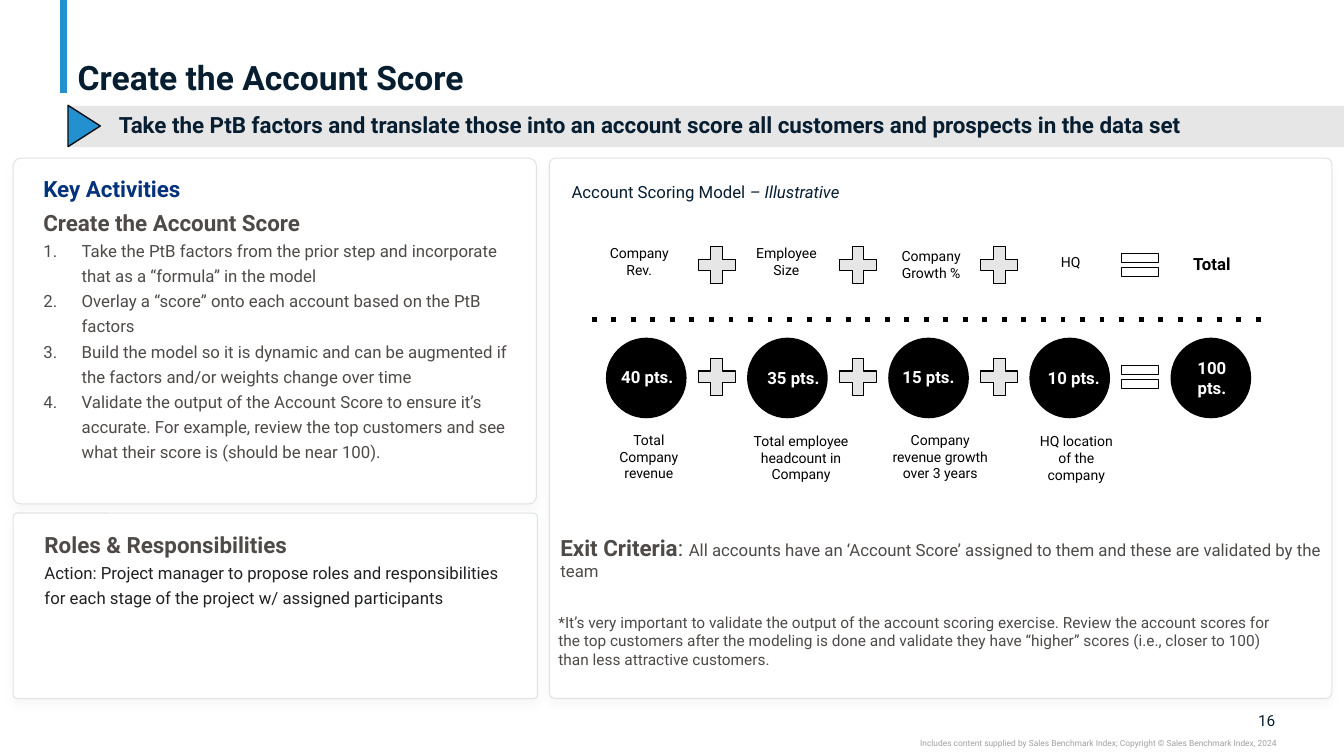
from lxml.etree import SubElement
from pptx import Presentation
from pptx.dml.color import RGBColor
from pptx.enum.shapes import MSO_CONNECTOR, MSO_SHAPE
from pptx.enum.text import MSO_ANCHOR, MSO_AUTO_SIZE, PP_ALIGN
from pptx.oxml.ns import qn
from pptx.util import Inches, Pt

NAVY, GRAY, BLACK, WHITE = "071E31", "4E4A48", "000000", "FFFFFF"
BLUE, SILVER, BORDER = "2391CF", "E7E6E6", "E0E3E6"
TEXT_INSETS = (0.1, 0.05, 0.1, 0.05)
CARD_INSETS = (0.3, 0.1, 0.2, 0)
NO_INSETS = (0, 0, 0, 0)


def rgb(color):
    return RGBColor.from_string(color)


class SlideBuilder:
    font_name = "Roboto"

    def __init__(self, presentation):
        self.slide = presentation.slides.add_slide(presentation.slide_layouts[1])
        self.shapes = self.slide.shapes

    def set_text(self, shape, paragraphs, size=12, color=BLACK, bold=False,
                 align=PP_ALIGN.LEFT, insets=TEXT_INSETS, spacing=1.0,
                 anchor=MSO_ANCHOR.TOP):
        """Fill a shape; a paragraph is a list of (text, style overrides) runs."""
        frame = shape.text_frame
        frame.word_wrap = True
        frame.auto_size = MSO_AUTO_SIZE.NONE
        frame.vertical_anchor = anchor
        (frame.margin_left, frame.margin_top,
         frame.margin_right, frame.margin_bottom) = map(Inches, insets)
        for index, runs in enumerate(paragraphs):
            paragraph = frame.add_paragraph() if index else frame.paragraphs[0]
            paragraph.alignment = align
            paragraph.line_spacing = spacing
            paragraph.space_before = paragraph.space_after = Pt(0)
            for text, overrides in runs:
                style = {"size": size, "color": color, "bold": bold, **overrides}
                run = paragraph.add_run()
                run.text = text
                run.font.name = self.font_name
                run.font.size = Pt(style["size"])
                run.font.bold = style["bold"]
                run.font.italic = style.get("italic", False)
                run.font.color.rgb = rgb(style["color"])

    def place(self, shape, box):
        shape.left, shape.top, shape.width, shape.height = map(Inches, box)
        return shape

    def title(self, text, box, **style):
        self.set_text(self.place(self.shapes.title, box), [[(text, {})]], **style)

    def text(self, box, *runs, **style):
        """Add a text box holding one paragraph."""
        self.set_text(self.shapes.add_textbox(*map(Inches, box)), [runs], **style)

    def shape(self, kind, box, fill, line=None, line_width=0.75):
        shape = self.shapes.add_shape(kind, *map(Inches, box))
        shape.shadow.inherit = False
        shape.fill.solid()
        shape.fill.fore_color.rgb = rgb(fill)
        if line:
            shape.line.color.rgb = rgb(line)
            shape.line.width = Pt(line_width)
        else:
            shape.line.fill.background()
        return shape

    def card(self, box, corner):
        """Add a white rounded panel with a faint drop shadow."""
        card = self.shape(MSO_SHAPE.ROUNDED_RECTANGLE, box, WHITE, BORDER)
        card.adjustments[0] = corner
        effects = card._element.spPr.find(qn("a:effectLst"))
        shadow = SubElement(effects, qn("a:outerShdw"), blurRad=str(Pt(6)),
                            dist=str(Pt(4)), dir="5400000", rotWithShape="0")
        shadow_color = SubElement(shadow, qn("a:srgbClr"), val=GRAY)
        SubElement(shadow_color, qn("a:alpha"), val="3000")
        return card

    def body(self, box, headings, items, **style):
        """Put headings and a numbered list in the body placeholder, in front."""
        body = self.place(self.slide.placeholders[1], box)
        self.shapes._spTree.append(body._element)
        runs = [[heading] for heading in headings] + [[(item, {})] for item in items]
        self.set_text(body, runs, **style)
        for index, paragraph in enumerate(body.text_frame.paragraphs):
            properties = paragraph._p.get_or_add_pPr()
            numbered = index >= len(headings)
            indent = Inches(0.38) if numbered else 0
            properties.set("marL", str(indent))
            properties.set("indent", str(-indent))
            if numbered:
                bullet_color = SubElement(properties, qn("a:buClr"))
                SubElement(bullet_color, qn("a:srgbClr"), val=GRAY)
                SubElement(properties, qn("a:buFont"), typeface=self.font_name)
                SubElement(properties, qn("a:buAutoNum"), type="arabicPeriod")
            else:
                SubElement(properties, qn("a:buNone"))

    def line(self, start, end, color, width, dash=None):
        connector = self.shapes.add_connector(
            MSO_CONNECTOR.STRAIGHT, *map(Inches, (*start, *end)))
        connector.line.color.rgb = rgb(color)
        connector.line.width = Pt(width)
        properties = connector._element.spPr
        if dash:
            SubElement(properties.find(qn("a:ln")), qn("a:prstDash"), val=dash)
        SubElement(properties, qn("a:effectLst"))


def add_header(builder):
    builder.line((0.63, 0), (0.63, 0.92), BLUE, 5)
    builder.shape(MSO_SHAPE.RECTANGLE, (0.67, 1.05, 12.66, 0.41), SILVER)
    builder.title("Create the Account Score", (0.67, 0.56, 10.42, 0.73),
                  size=24, color=NAVY, bold=True, spacing=0.9)
    builder.text((1.08, 1.08, 11.58, 0.42),
                 ("Take the PtB factors and translate those into an account score "
                  "all customers and prospects in the data set", {}),
                 size=16, color=NAVY, bold=True, spacing=0.9)
    arrow = builder.shape(MSO_SHAPE.ISOSCELES_TRIANGLE, (0.63, 1.09, 0.41, 0.32),
                          BLUE, "030D15", 1)
    arrow.rotation = 90


def add_left_cards(builder):
    activities_box = (0.13, 1.57, 5.19, 3.43)
    heading = {"size": 16, "bold": True}
    builder.card(activities_box, 0.022)
    builder.body(
        activities_box,
        [("Key Activities", {**heading, "color": "03327C"}),
         ("Create the Account Score", heading)],
        ["Take the PtB factors from the prior step and incorporate that as a “formula” in the model",
         "Overlay a “score” onto each account based on the PtB factors",
         "Build the model so it is dynamic and can be augmented if the factors and/or "
         "weights change over time",
         "Validate the output of the Account Score to ensure it’s accurate. For example, "
         "review the top customers and see what their score is (should be near 100)."],
        color=GRAY, insets=CARD_INSETS, spacing=1.25)
    builder.set_text(
        builder.card((0.13, 5.09, 5.2, 1.84), 0.022),
        [[("Roles & Responsibilities", {**heading, "color": GRAY})],
         [("Action: Project manager to propose roles and responsibilities for each stage "
           "of the project w/ assigned participants", {})]],
        color="202124", insets=CARD_INSETS, spacing=1.25)


def add_scoring_model(builder):
    builder.card((5.45, 1.57, 7.76, 5.36), 0.011)
    builder.text((5.57, 1.75, 4.75, 0.3), ("Account Scoring Model ", {}),
                 ("– Illustrative", {"italic": True}), color=NAVY)
    builder.line((5.87, 3.17), (12.53, 3.17), BLACK, 3.5, "dot")

    first_left, step, diameter = 6.01, 1.4, 0.8
    for column in range(5):
        left = first_left + column * step
        builder.shape(MSO_SHAPE.OVAL, (left, 3.35, diameter, diameter), BLACK)
        for middle in (2.63, 3.74):
            sign_left = left + 0.85
            if column < 3:
                builder.shape(MSO_SHAPE.MATH_PLUS, (sign_left, middle - 0.25, 0.5, 0.5),
                              SILVER, BLACK)
            elif column == 3:
                builder.shape(MSO_SHAPE.MATH_EQUAL, (sign_left, middle - 0.2, 0.5, 0.4),
                              WHITE, BLACK)

    small = {"size": 10, "align": PP_ALIGN.CENTER}
    strong = {"size": 12, "align": PP_ALIGN.CENTER, "bold": True}
    points = {**strong, "color": WHITE}
    labels = [
        ("Company Rev.", (5.87, 2.38, 0.94, 0.44), small),
        ("Employee Size", (7.37, 2.38, 0.86, 0.44), small),
        ("Company Growth %", (8.81, 2.41, 0.85, 0.44), small),
        ("HQ", (10.22, 2.47, 0.8, 0.27), small),
        ("Total", (11.62, 2.47, 0.8, 0.3), strong),
        ("40 pts.", (6.02, 3.59, 0.8, 0.3), points),
        ("35 pts.", (7.47, 3.6, 0.8, 0.3), points),
        ("15 pts.", (8.81, 3.59, 0.8, 0.3), points),
        ("10 pts.", (10.25, 3.6, 0.8, 0.3), points),
        ("100 pts.", (11.62, 3.5, 0.8, 0.5), points),
        ("Total Company revenue", (6.01, 4.23, 0.85, 0.61), small),
        ("Total employee headcount in Company", (7.36, 4.24, 1.17, 0.77), small),
        ("Company revenue growth over 3 years", (8.74, 4.23, 1.17, 0.77), small),
        ("HQ location of the company", (10.16, 4.24, 1.03, 0.61), small),
    ]
    for label, box, style in labels:
        builder.text(box, (label, {}), **style)


def add_exit_criteria(builder):
    builder.text((5.46, 5.25, 7.75, 0.57),
                 ("Exit Criteria", {"size": 16, "bold": True}), (": ", {"size": 16}),
                 ("All accounts have an ‘Account Score’ assigned to them and these are "
                  "validated by the team", {}), color=GRAY)
    builder.text((5.44, 6.03, 7.51, 0.66),
                 ("*It’s very important to validate the output of the account scoring exercise. "
                  "Review the account scores for the top customers after the modeling is done and "
                  "validate they have “higher” scores (i.e., closer to 100) than less attractive "
                  "customers.", {}), size=11, color=GRAY)


def add_footer(builder):
    builder.text((12.32, 7.05, 0.33, 0.19), ("16", {}), size=11, color=NAVY,
                 align=PP_ALIGN.RIGHT, insets=NO_INSETS, anchor=MSO_ANCHOR.MIDDLE)
    builder.text((7.5, 7.32, 5.16, 0.1),
                 ("Includes content supplied by Sales Benchmark Index; "
                  "Copyright © Sales Benchmark Index, 2024", {}),
                 size=6, color="A0A0A0", align=PP_ALIGN.RIGHT, insets=NO_INSETS)


def main():
    presentation = Presentation()
    presentation.slide_width, presentation.slide_height = Inches(13.33), Inches(7.5)
    builder = SlideBuilder(presentation)
    for add_section in (add_header, add_left_cards, add_scoring_model,
                        add_exit_criteria, add_footer):
        add_section(builder)
    presentation.save("out.pptx")


if __name__ == "__main__":
    main()
